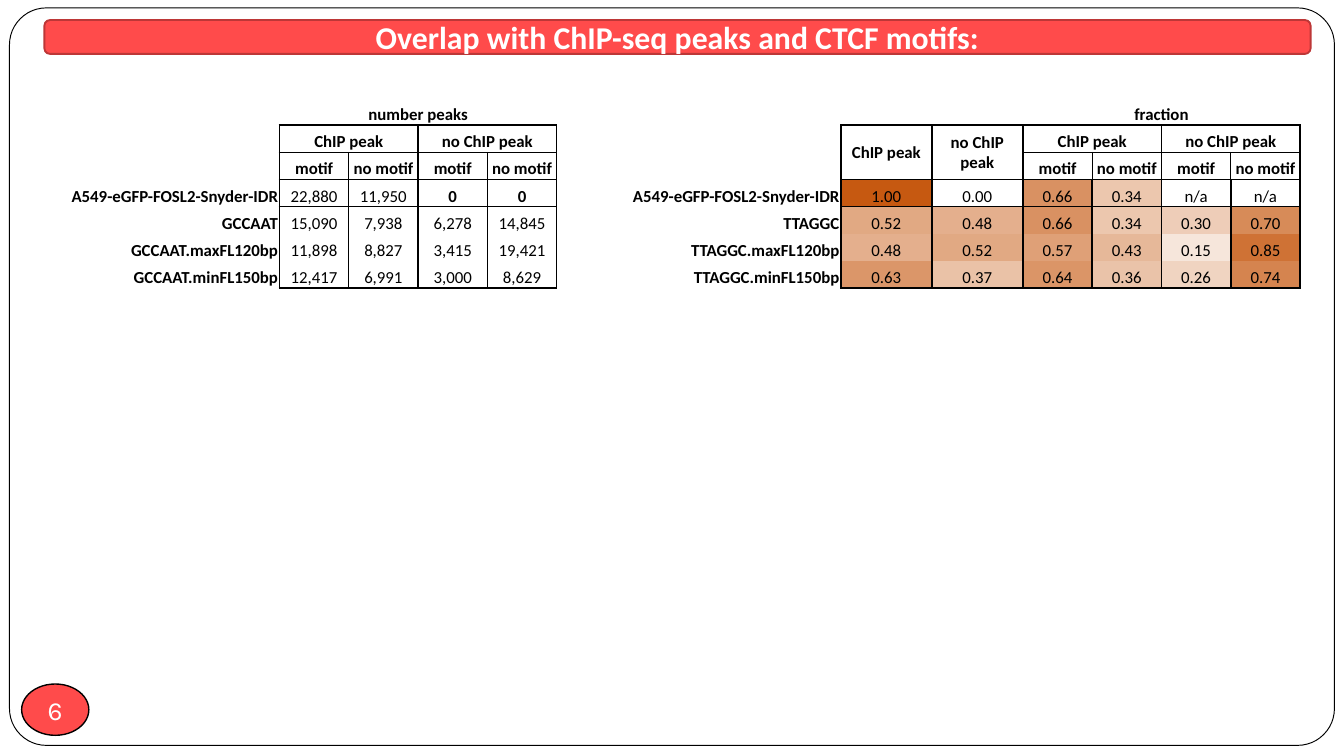
from lxml import etree
from pptx import Presentation
from pptx import util as u
from pptx.dml.color import RGBColor
from pptx.enum import shapes, text
from pptx.oxml import ns

BLACK, WHITE, RED, DARK_RED = "000000", "FFFFFF", "FF4B4B", "BD3737"
FULL_ORANGE = (0xC6, 0x59, 0x11)
THICK, THIN = 1, 0.5
NO_GRID_STYLE = "{2D5ABB26-0587-4C30-8999-92F81FD0307C}"

COLUMN_WIDTHS = [4.21] + [1.31] * 5 + [4.06] + [1.72] * 2 + [1.31] * 4
ROW_COUNT = 7
LABEL_COLUMNS = (0, 6)
PAIRS = (1, 3, 9, 11)
PAIR_TITLES = ("ChIP peak", "no ChIP peak") * 2
ROWS = [
    ("A549-eGFP-FOSL2-Snyder-IDR", "22,880", "11,950", "0", "0", "",
     "A549-eGFP-FOSL2-Snyder-IDR", "1.00", "0.00", "0.66", "0.34", "n/a", "n/a"),
    ("GCCAAT", "15,090", "7,938", "6,278", "14,845", "",
     "TTAGGC", "0.52", "0.48", "0.66", "0.34", "0.30", "0.70"),
    ("GCCAAT.maxFL120bp", "11,898", "8,827", "3,415", "19,421", "",
     "TTAGGC.maxFL120bp", "0.48", "0.52", "0.57", "0.43", "0.15", "0.85"),
    ("GCCAAT.minFL150bp", "12,417", "6,991", "3,000", "8,629", "",
     "TTAGGC.minFL150bp", "0.63", "0.37", "0.64", "0.36", "0.26", "0.74"),
]


def color(value):
    """Turn a hex string into a colour."""
    return RGBColor.from_string(value)


def shade(fraction):
    """Blend white towards orange in proportion to the fraction."""
    return "".join(f"{round(255 - (255 - part) * fraction):02X}" for part in FULL_ORANGE)


def add_panel(slide, kind, box, fill, line, width):
    """Add a filled and outlined shape in the box, given in centimetres."""
    shape = slide.shapes.add_shape(kind, *map(u.Cm, box))
    shape.shadow.inherit = False
    shape.fill.solid()
    shape.fill.fore_color.rgb = color(fill)
    shape.line.color.rgb = color(line)
    shape.line.width = u.Pt(width)
    return shape


def set_label(shape, label, font_name, size, bold=False):
    """Write one white centred line in the shape."""
    frame = shape.text_frame
    frame.text = label
    frame.vertical_anchor = text.MSO_ANCHOR.MIDDLE
    paragraph = frame.paragraphs[0]
    paragraph.alignment = text.PP_ALIGN.CENTER
    font = paragraph.runs[0].font
    font.name, font.size, font.bold = font_name, u.Pt(size), bold
    font.color.rgb = color(WHITE)


def add_frame(slide, box):
    """Draw the rounded frame round the slide."""
    frame = add_panel(slide, shapes.MSO_SHAPE.ROUNDED_RECTANGLE, box, WHITE, BLACK, 0.5)
    frame.adjustments[0] = 0.05


def add_page_number(slide, box, number):
    """Draw the page number in its ellipse."""
    badge = add_panel(slide, shapes.MSO_SHAPE.OVAL, box, RED, BLACK, 0.75)
    set_label(badge, number, "Karla", 14)
    frame = badge.text_frame
    frame.word_wrap = False
    frame.margin_left = frame.margin_right = frame.margin_top = frame.margin_bottom = 0


def add_title(slide, box, title):
    """Draw the title bar."""
    bar = add_panel(slide, shapes.MSO_SHAPE.ROUNDED_RECTANGLE, box, RED, DARK_RED, 1)
    set_label(bar, title, "Calibri", 17, bold=True)


def set_borders(cell, **widths):
    """Draw the named sides L, R, T and B with widths in points."""
    properties = cell._tc.get_or_add_tcPr()
    for side in "LRTB":
        if side in widths:
            line = etree.Element(ns.qn(f"a:ln{side}"), w=str(u.Pt(widths[side])))
            fill = etree.SubElement(line, ns.qn("a:solidFill"))
            etree.SubElement(fill, ns.qn("a:srgbClr"), val=BLACK)
            properties.append(line)


def set_cell(cell, label="", bold=False, alignment=text.PP_ALIGN.CENTER,
             anchor=text.MSO_ANCHOR.BOTTOM, fill=None):
    """Write one table cell and set its fill."""
    cell.text = label
    cell.margin_left = cell.margin_right = cell.margin_top = u.Cm(0.03)
    cell.margin_bottom = 0
    cell.vertical_anchor = anchor
    paragraph = cell.text_frame.paragraphs[0]
    paragraph.alignment = alignment
    paragraph._p.get_or_add_endParaRPr().set("sz", "900")
    for run in paragraph.runs:
        run.font.name, run.font.size, run.font.bold = "Calibri", u.Pt(9), bold
        run.font.color.rgb = color(BLACK)
    if fill:
        cell.fill.solid()
        cell.fill.fore_color.rgb = color(fill)
    else:
        cell.fill.background()


def fill_headers(table):
    """Write and merge the three header rows."""
    for column, label in ((1, "number peaks"), (9, "fraction")):
        cell = table.cell(0, column)
        cell.merge(table.cell(0, column + 3))
        set_borders(cell, B=THICK)
        set_cell(cell, label, bold=True)
    for column, label in zip(PAIRS, PAIR_TITLES):
        cell = table.cell(1, column)
        cell.merge(table.cell(1, column + 1))
        set_borders(cell, L=THICK, R=THICK, T=THICK, B=THIN)
        set_borders(table.cell(1, column + 1), R=THICK, T=THICK, B=THIN)
        set_cell(cell, label, bold=True)
        motif, no_motif = table.cell(2, column), table.cell(2, column + 1)
        set_borders(motif, L=THICK, R=THIN, T=THIN, B=THIN)
        set_borders(no_motif, L=THIN, R=THICK, T=THIN, B=THIN)
        set_cell(motif, "motif", bold=True)
        set_cell(no_motif, "no motif", bold=True)
    for column, label, side in ((7, "ChIP peak", "L"), (8, "no ChIP peak", "R")):
        cell = table.cell(1, column)
        cell.merge(table.cell(2, column))
        set_borders(cell, **{side: THICK, "T": THICK, "B": THIN})
        set_borders(table.cell(2, column), **{side: THICK, "B": THIN})
        set_cell(cell, label, bold=True, anchor=text.MSO_ANCHOR.MIDDLE)


def fill_body(table):
    """Write the value rows, shading the fractions."""
    for row, values in enumerate(ROWS, start=3):
        for column, value in enumerate(values):
            cell = table.cell(row, column)
            if column in LABEL_COLUMNS:
                set_cell(cell, value, bold=True, alignment=text.PP_ALIGN.RIGHT)
            elif value:
                sides = {}
                if column in PAIRS or column in (7, 8):
                    sides["L"] = THICK
                if column - 1 in PAIRS or column in (7, 8):
                    sides["R"] = THICK
                if row == 3:
                    sides["T"] = THIN
                if row == ROW_COUNT - 1:
                    sides["B"] = THICK
                set_borders(cell, **sides)
                is_fraction = column > 6 and value != "n/a"
                set_cell(cell, value, bold=value == "0",
                         fill=shade(float(value)) if is_fraction else None)


def add_peak_table(slide, box):
    """Build the table of peak numbers and fractions."""
    left, top, width, height = map(u.Cm, box)
    graphic = slide.shapes.add_table(ROW_COUNT, len(COLUMN_WIDTHS), left, top, width, height)
    table = graphic.table
    table.first_row = table.horz_banding = False
    table._tbl.tblPr.find(ns.qn("a:tableStyleId")).text = NO_GRID_STYLE
    for column, share in zip(table.columns, COLUMN_WIDTHS):
        column.width = int(width * share / sum(COLUMN_WIDTHS))
    for row in table.rows:
        row.height = height // ROW_COUNT
    fill_headers(table)
    fill_body(table)
    for cell in table.iter_cells():
        if not cell.text:
            set_cell(cell)


def main():
    """Build and save the presentation."""
    presentation = Presentation()
    presentation.slide_width, presentation.slide_height = u.Cm(25.4), u.Cm(14.29)
    slide = presentation.slides.add_slide(presentation.slide_layouts[6])
    add_frame(slide, (0.18, 0.15, 25.04, 13.94))
    add_page_number(slide, (0.41, 12.93, 1.27, 0.97), "6")
    add_title(slide, (0.84, 0.38, 23.93, 0.64), "Overlap with ChIP-seq peaks and CTCF motifs:")
    add_peak_table(slide, (1.07, 1.85, 23.5, 3.6))
    presentation.save("out.pptx")


if __name__ == "__main__":
    main()
